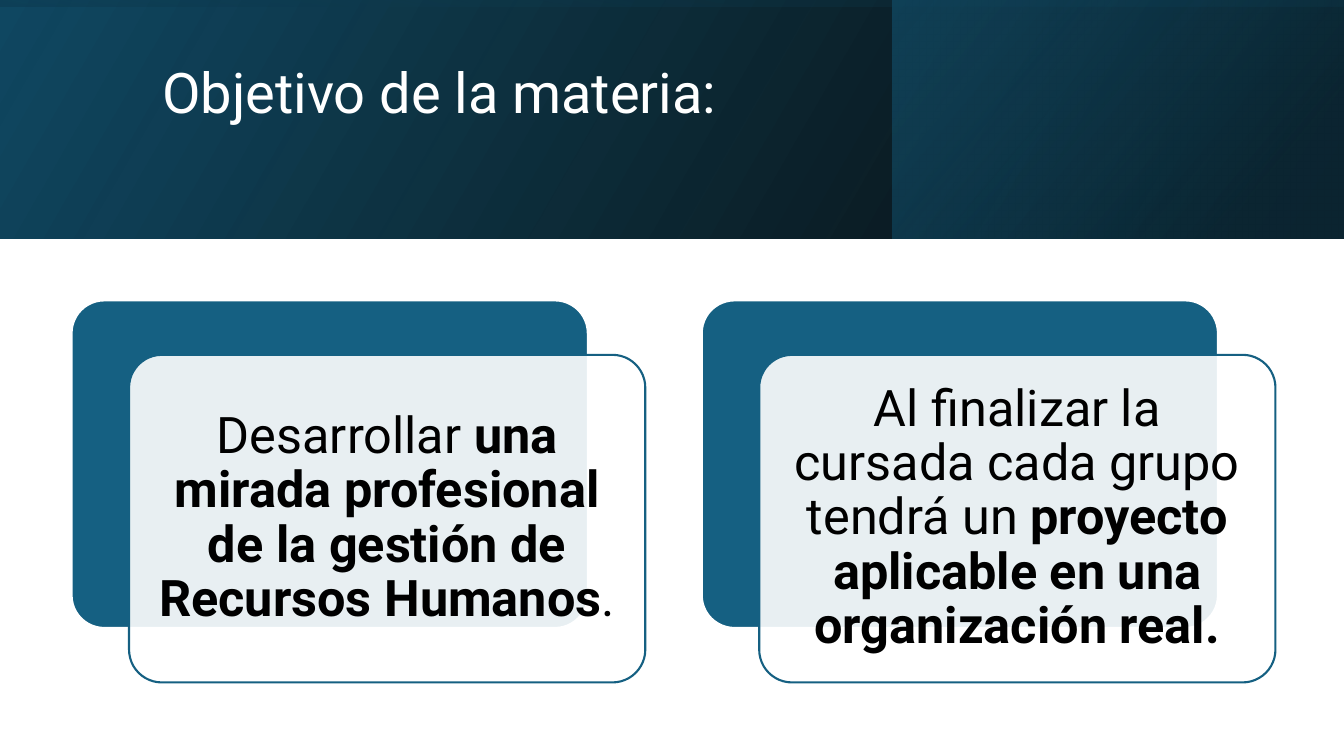
import pptx
import pptx.dml.color
import pptx.enum.shapes
import pptx.enum.text
import pptx.oxml
import pptx.oxml.ns
import pptx.util

Inches = pptx.util.Inches
SHAPES = pptx.enum.shapes.MSO_SHAPE
TEXT = pptx.enum.text
FONT = "Roboto"
TEAL = "156082"
WIDTH, HEIGHT = 13.33, 7.5
BANNER_HEIGHT = 2.37


def colour(value):
    return pptx.dml.color.RGBColor.from_string(value)


def apply_format(target, values):
    for name, value in values.items():
        setattr(target, name, value)


def add_shape(slide, kind, box):
    shape = slide.shapes.add_shape(kind, *map(Inches, box))
    shape.shadow.inherit = False
    return shape


def add_gradient(slide, box, stops, angle, rotation=0):
    shape = add_shape(slide, SHAPES.RECTANGLE, box)
    shape.rotation = rotation
    shape.line.fill.background()
    properties = shape._element.spPr
    properties.find(pptx.oxml.ns.qn("a:xfrm")).set("flipH", "1")
    stop_xml = "".join(
        f'<a:gs pos="{position * 1000}"><a:srgbClr val="{value}">'
        f'<a:alpha val="{opacity * 1000}"/></a:srgbClr></a:gs>'
        for position, value, opacity in stops
    )
    gradient = pptx.oxml.parse_xml(
        f'<a:gradFill {pptx.oxml.ns.nsdecls("a")} rotWithShape="1">'
        f'<a:gsLst>{stop_xml}</a:gsLst>'
        f'<a:lin ang="{angle * 60000}" scaled="0"/></a:gradFill>'
    )
    properties.find(pptx.oxml.ns.qn("a:prstGeom")).addnext(gradient)


def add_text(slide, box, runs, size, text_colour, alignment, margins):
    frame = slide.shapes.add_textbox(*map(Inches, box)).text_frame
    apply_format(frame, {
        "word_wrap": True,
        "vertical_anchor": TEXT.MSO_ANCHOR.MIDDLE,
        **{f"margin_{side}": Inches(margin) for side, margin in margins.items()},
    })
    paragraph = frame.paragraphs[0]
    apply_format(paragraph, {"alignment": alignment, "line_spacing": 0.9})
    for text, bold in runs:
        run = paragraph.add_run()
        run.text = text
        apply_format(run.font, {"name": FONT, "size": pptx.util.Pt(size), "bold": bold})
        run.font.color.rgb = colour(text_colour)


def add_banner(slide, box):
    left, top, width, height = box
    add_gradient(slide, box, [(0, "000000", 96), (100, "104862", 100)], 330)
    panel_width = 4.48
    add_gradient(slide, (left + width - panel_width, top, panel_width, height),
                 [(19, "0B3041", 68), (100, TEAL, 48)], 320)
    offset = (width - height) / 2
    add_gradient(slide, (left + offset, top - offset, height, width),
                 [(23, "104862", 16), (99, "000000", 45)], 350, 270)
    add_text(slide, (left + 1.51, top + 0.38, 10.63, 1.72),
             [("Objetivo de la materia:", False)], 40, "FFFFFF",
             TEXT.PP_ALIGN.LEFT, {"bottom": 0.64})


def add_rounded(slide, box, fill, line):
    shape = add_shape(slide, SHAPES.ROUNDED_RECTANGLE, box)
    shape.adjustments[0] = 0.1
    shape.fill.solid()
    shape.fill.fore_color.rgb = colour(fill)
    shape.line.color.rgb = colour(line)
    shape.line.width = pptx.util.Pt(1.5)
    return shape


def add_card(slide, box, runs):
    left, top, width, height = box
    add_rounded(slide, box, TEAL, "FFFFFF")
    left, top = left + 0.57, top + 0.54
    front = add_rounded(slide, (left, top, width, height), "FFFFFF", TEAL)
    fill_colour = front._element.spPr.find(".//" + pptx.oxml.ns.qn("a:srgbClr"))
    fill_colour.append(pptx.oxml.parse_xml(
        f'<a:alpha {pptx.oxml.ns.nsdecls("a")} val="90000"/>'))
    inset = 0.1
    add_text(slide, (left + inset, top + inset, width - 2 * inset, height - 2 * inset),
             runs, 36, "000000", TEXT.PP_ALIGN.CENTER,
             dict.fromkeys(("left", "top", "right", "bottom"), 0.15))


def main():
    presentation = pptx.Presentation()
    presentation.slide_width = Inches(WIDTH)
    presentation.slide_height = Inches(HEIGHT)
    slide = presentation.slides.add_slide(presentation.slide_layouts[6])
    add_banner(slide, (0, 0, WIDTH, BANNER_HEIGHT))
    goals = [
        [("Desarrollar ", False),
         ("una mirada profesional de la gestión de Recursos Humanos", True),
         (".", False)],
        [("Al finalizar la cursada cada grupo tendrá un ", False),
         ("proyecto aplicable en una organización real.", True)],
    ]
    for index, runs in enumerate(goals):
        add_card(slide, (0.71 + index * 6.25, 2.98, 5.12, 3.25), runs)
    presentation.save("out.pptx")


if __name__ == "__main__":
    main()
